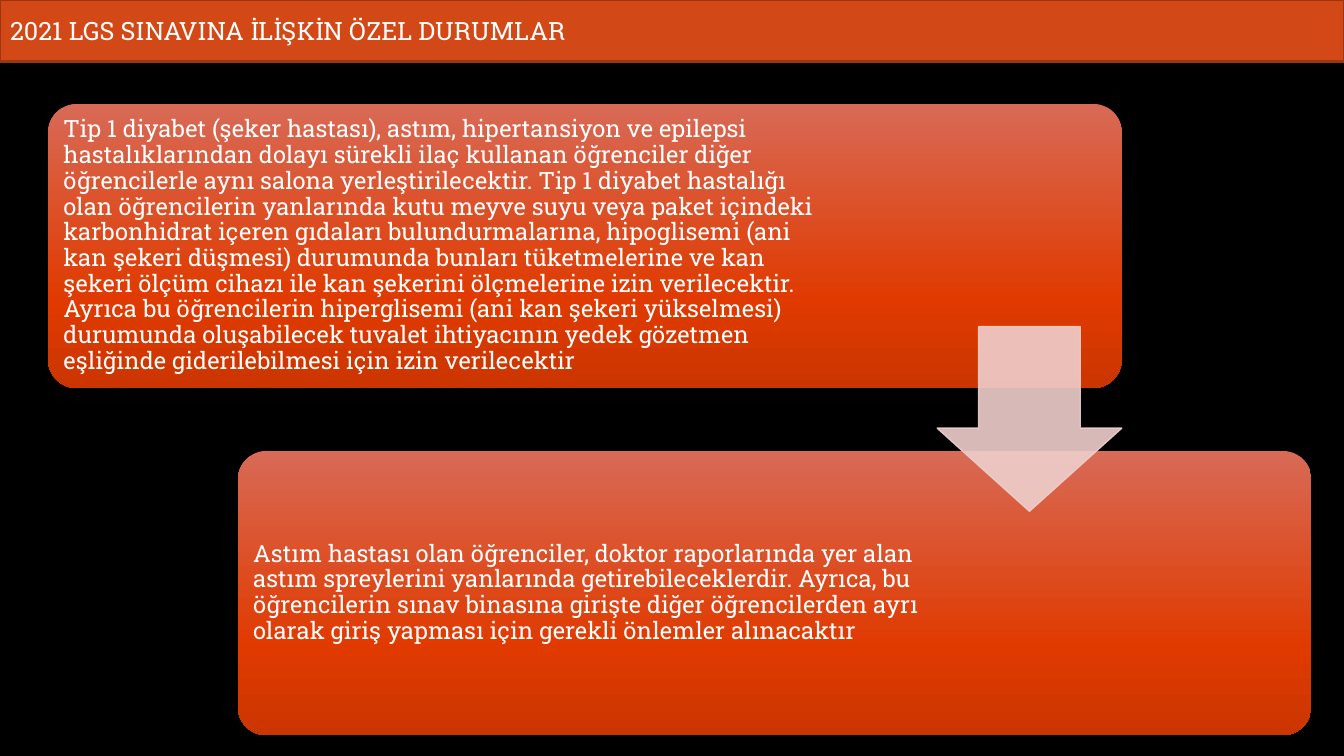
from copy import deepcopy

from lxml import etree
from pptx import Presentation
from pptx.dml.color import RGBColor
from pptx.enum import shapes, text
from pptx.oxml.ns import qn
from pptx.util import Pt

TITLE = "2021 LGS SINAVINA İLİŞKİN ÖZEL DURUMLAR"
DIABETES = (
    "Tip 1 diyabet (şeker hastası), astım, hipertansiyon ve epilepsi hastalıklarından dolayı "
    "sürekli ilaç kullanan öğrenciler diğer öğrencilerle aynı salona yerleştirilecektir. "
    "Tip 1 diyabet hastalığı olan öğrencilerin yanlarında kutu meyve suyu veya paket içindeki "
    "karbonhidrat içeren gıdaları bulundurmalarına, hipoglisemi (ani kan şekeri düşmesi) "
    "durumunda bunları tüketmelerine ve kan şekeri ölçüm cihazı ile kan şekerini ölçmelerine "
    "izin verilecektir. Ayrıca bu öğrencilerin hiperglisemi (ani kan şekeri yükselmesi) "
    "durumunda oluşabilecek tuvalet ihtiyacının yedek gözetmen eşliğinde giderilebilmesi için "
    "izin verilecektir"
)
ASTHMA = (
    "Astım hastası olan öğrenciler, doktor raporlarında yer alan astım spreylerini yanlarında "
    "getirebileceklerdir. Ayrıca, bu öğrencilerin sınav binasına girişte diğer öğrencilerden "
    "ayrı olarak giriş yapması için gerekli önlemler alınacaktır"
)


def rgb(value):
    return RGBColor.from_string(value)


class SlideBuilder:
    font = "Roboto Slab"
    white = "FFFFFF"
    gradient = [(0, "D86A56"), (0.69, "E03A00"), (1, "CB3500")]

    def __init__(self, slide):
        self.s = slide

    def background(self, color):
        fill = self.s.background.fill
        fill.solid()
        fill.fore_color.rgb = rgb(color)

    def paint(self, sp, fill, line, width):
        sp.fill.solid()
        sp.fill.fore_color.rgb = rgb(fill)
        sp.line.color.rgb = rgb(line)
        sp.line.width = Pt(width)

    def put_text(self, sp, words, size, spacing=1.0):
        tf = sp.text_frame
        tf.word_wrap = True
        tf.auto_size = text.MSO_AUTO_SIZE.NONE
        tf.vertical_anchor = text.MSO_ANCHOR.MIDDLE
        tf.text = words
        p = tf.paragraphs[0]
        p.alignment = text.PP_ALIGN.LEFT
        p.line_spacing = spacing
        p.font.name, p.font.size = self.font, Pt(size)
        p.font.color.rgb = rgb(self.white)
        return tf

    def shape(self, kind, x, y, w, h, *adjustments):
        sp = self.s.shapes.add_shape(kind, Pt(x), Pt(y), Pt(w), Pt(h))
        sp.shadow.inherit = False
        for i, value in enumerate(adjustments):
            sp.adjustments[i] = value
        return sp

    def title(self, words, width, height):
        sp = self.s.shapes.title
        sp.left, sp.top, sp.width, sp.height = Pt(0), Pt(0), Pt(width), Pt(height)
        self.paint(sp, "D34817", "9C3511", 1.5)
        self.put_text(sp, words, 18)

    def card(self, x, y, w, h):
        sp = self.shape(shapes.MSO_SHAPE.ROUNDED_RECTANGLE, x, y, w, h, 0.1)
        sp.line.fill.background()
        sp.fill.gradient()
        sp.fill.gradient_angle = 270
        # The default gradient has two stops; add the third
        stops = sp._element.spPr.find(qn("a:gradFill")).find(qn("a:gsLst"))
        stops.append(deepcopy(stops[-1]))
        for stop, (position, color) in zip(sp.fill.gradient_stops, self.gradient):
            stop.position = position
            stop.color.rgb = rgb(color)

    def body(self, words, x, y, w, h):
        sp = self.s.shapes.add_textbox(Pt(x), Pt(y), Pt(w), Pt(h))
        tf = self.put_text(sp, words, 17, 0.9)
        tf.margin_left = tf.margin_right = tf.margin_top = tf.margin_bottom = Pt(5)

    def arrow(self, x, y, size, color):
        sp = self.shape(shapes.MSO_SHAPE.DOWN_ARROW, x, y, size, size, 0.55, 0.45)
        self.paint(sp, color, color, 1)
        # Fill and line are 90 % opaque
        for clr in list(sp._element.spPr.iter(qn("a:srgbClr"))):
            etree.SubElement(clr, qn("a:alpha")).set("val", "90000")


def main():
    prs = Presentation()
    prs.slide_width, prs.slide_height = Pt(960), Pt(540)
    slide = SlideBuilder(prs.slides.add_slide(prs.slide_layouts[5]))
    slide.background("000000")

    # Title bar
    slide.title(TITLE, 960, 44)

    # Two staggered cards with their texts
    inset, card_w, card_h = 6, 766.8, 203
    for x, y, words, text_w in [(34.4, 74.2, DIABETES, 557.3), (169.9, 322.1, ASTHMA, 487.4)]:
        slide.card(x, y, card_w, card_h)
        slide.body(words, x + inset, y + inset, text_w, card_h - 2 * inset)

    # Arrow leading from the first card to the second
    slide.arrow(669.4, 233.3, 131.9, "EFCFCC")

    prs.save("out.pptx")


if __name__ == "__main__":
    main()
